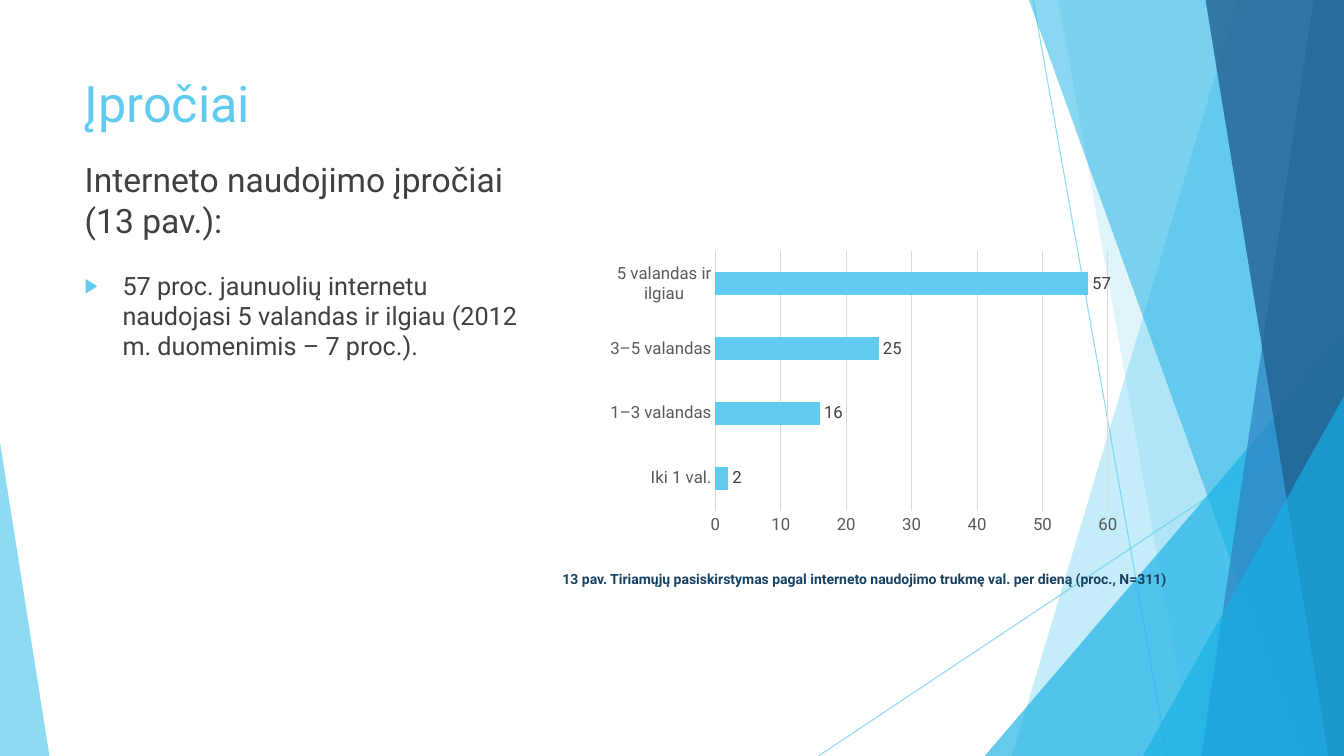
from lxml.etree import SubElement
from pptx import Presentation
from pptx.chart.data import CategoryChartData
from pptx.dml.color import RGBColor
from pptx.enum.chart import XL_CHART_TYPE, XL_LABEL_POSITION, XL_TICK_MARK
from pptx.enum.shapes import MSO_CONNECTOR, MSO_SHAPE
from pptx.enum.text import MSO_ANCHOR, MSO_AUTO_SIZE, PP_ALIGN
from pptx.oxml.ns import qn
from pptx.util import Pt

WIDE, HIGH = 960, 540
SKY, CYAN, BLUE, NAVY = "5FCBEF", "17B0E4", "2E83C3", "226292"
DARK, GREY, PALE, INK = "404040", "595959", "D9D9D9", "174162"


def tint(color, code):
    """Set a colour format from a hex string."""
    color.rgb = RGBColor.from_string(code)


class Deck:
    """Holds the style and the current slide."""

    def __init__(self, face):
        """Start a wide deck with one comparison slide."""
        self.face = face
        self.file = Presentation()
        self.file.slide_width, self.file.slide_height = Pt(WIDE), Pt(HIGH)
        self.page = self.file.slides.add_slide(self.file.slide_layouts[4])
        self.shapes = self.page.shapes

    def font(self, font, size, code, bold=False):
        """Format one font."""
        font.name, font.size, font.bold = self.face, Pt(size), bold
        tint(font.color, code)

    def fade(self, shape, alpha):
        """Make the colour of a shape partly clear."""
        color = shape.element.spPr.find(".//" + qn("a:srgbClr"))
        SubElement(color, qn("a:alpha"), val=str(alpha * 1000))

    def paint(self, shape, code, alpha):
        """Fill a shape and drop its outline and shadow."""
        shape.shadow.inherit = False
        shape.line.fill.background()
        shape.fill.solid()
        tint(shape.fill.fore_color, code)
        self.fade(shape, alpha)

    def band(self, top, base, code, alpha):
        """Draw a band from a slanted left edge to the right of the slide."""
        form = self.shapes.build_freeform(Pt(top), 0)
        ends = [(WIDE, 0), (WIDE, HIGH), (base, HIGH)]
        form.add_line_segments([(Pt(x), Pt(y)) for x, y in ends])
        self.paint(form.convert_to_shape(), code, alpha)

    def peak(self, left, top, wide, tip, code, alpha):
        """Draw a triangle standing on the bottom of the slide."""
        shape = self.shapes.add_shape(
            MSO_SHAPE.ISOSCELES_TRIANGLE, Pt(left), Pt(top), Pt(wide), Pt(HIGH - top))
        shape.adjustments[0] = tip
        self.paint(shape, code, alpha)

    def line(self, *ends):
        """Draw a thin ray."""
        ray = self.shapes.add_connector(MSO_CONNECTOR.STRAIGHT, *map(Pt, ends))
        ray.line.width = Pt(0.75)
        tint(ray.line.color, SKY)
        self.fade(ray, 70)
        SubElement(ray.element.spPr, qn("a:effectLst"))

    def text(self, frame, words, size, code, bold=False, align=PP_ALIGN.LEFT):
        """Add one run to the first paragraph and return the paragraph."""
        para = frame.paragraphs[0]
        para.alignment = align
        run = para.add_run()
        run.text = words
        self.font(run.font, size, code, bold)
        return para

    def hold(self, key, area, words, size, code, anchor=MSO_ANCHOR.TOP):
        """Place a template holder in front and fill in its text."""
        box = next(b for b in self.page.placeholders
                   if b.placeholder_format.idx == key)
        box.left, box.top, box.width, box.height = map(Pt, area)
        box.element.getparent().append(box.element)
        frame = box.text_frame
        frame.auto_size = MSO_AUTO_SIZE.NONE
        frame.vertical_anchor = anchor
        para = self.text(frame, words, size, code)
        para.space_before = Pt(10 if key else 0)
        return para

    def bullet(self, para, indent):
        """Give a paragraph an arrow bullet."""
        props = para._p.get_or_add_pPr()
        props.set("marL", str(Pt(indent)))
        props.set("indent", str(Pt(-indent)))
        SubElement(SubElement(props, qn("a:buClr")), qn("a:srgbClr"), val=SKY)
        SubElement(props, qn("a:buSzPct"), val="80000")
        SubElement(props, qn("a:buFont"), typeface="Arial")
        SubElement(props, qn("a:buChar"), char="▶")

    def note(self, area, words, size, code):
        """Add a centred bold caption on one line."""
        frame = self.shapes.add_textbox(*map(Pt, area)).text_frame
        frame.word_wrap = False
        frame.auto_size = MSO_AUTO_SIZE.SHAPE_TO_FIT_TEXT
        self.text(frame, words, size, code, True, PP_ALIGN.CENTER)

    def bars(self, area, rows):
        """Add the horizontal bar chart."""
        data = CategoryChartData(number_format="0")
        data.categories = list(rows)
        data.add_series("Series 1", list(rows.values()))
        chart = self.shapes.add_chart(
            XL_CHART_TYPE.BAR_CLUSTERED, *map(Pt, area), data).chart
        chart.has_legend = chart.has_title = False
        self.font(chart.font, 10, "000000")
        names, scale = chart.category_axis, chart.value_axis
        for axis in (names, scale):
            axis.major_tick_mark = axis.minor_tick_mark = XL_TICK_MARK.NONE
            self.font(axis.tick_labels.font, 12, GREY)
        scale.minimum_scale, scale.maximum_scale, scale.major_unit = 0, 60, 10
        scale.has_major_gridlines = True
        scale.format.line.fill.background()
        for form in (names.format, scale.major_gridlines.format):
            form.line.width = Pt(0.75)
            tint(form.line.color, PALE)
        plot = chart.plots[0]
        plot.gap_width, plot.vary_by_categories = 182, False
        fill = plot.series[0].format.fill
        fill.solid()
        tint(fill.fore_color, SKY)
        plot.has_data_labels = True
        tags = plot.data_labels
        tags.show_value = True
        tags.number_format, tags.number_format_is_linked = "0", False
        tags.position = XL_LABEL_POSITION.OUTSIDE_END
        self.font(tags.font, 12, DARK)

    def save(self):
        """Drop empty holders and save the deck."""
        for box in list(self.page.placeholders):
            if not box.text_frame.text:
                box.element.getparent().remove(box.element)
        self.file.save("out.pptx")


def main():
    """Build the slide on internet habits."""
    deck = Deck("Roboto")
    deck.line(738, 0, 833.8, HIGH)
    deck.line(WIDE, 290.2, 584.6, HIGH)
    deck.band(884.2, 722.9, SKY, 36)
    deck.band(756, 851.8, SKY, 20)
    deck.peak(703.4, 239.8, 256.6, 1, CYAN, 66)
    deck.band(735, 929.5, CYAN, 50)
    deck.band(938.2, 858.2, BLUE, 70)
    deck.band(861.1, 949, NAVY, 80)
    deck.peak(816.5, 283, 143.5, 1, CYAN, 66)
    deck.peak(0, 316, 35.3, 0, SKY, 70)
    deck.hold(0, (53.3, 48, 677, 104), "Įpročiai", 36, SKY)
    deck.hold(1, (53.3, 129.6, 330, 45.4),
              "Interneto naudojimo įpročiai (13 pav.):", 24, DARK, MSO_ANCHOR.BOTTOM)
    fact = deck.hold(
        2, (53.3, 189.4, 330, 260),
        "57 proc. jaunuolių internetu naudojasi 5 valandas ir ilgiau "
        "(2012 m. duomenimis – 7 proc.).", 18, DARK)
    deck.bullet(fact, 27)
    deck.note((377.3, 404, 480, 19.4),
              "13 pav. Tiriamųjų pasiskirstymas pagal interneto naudojimo trukmę "
              "val. per dieną (proc., N=311)", 10, INK)
    deck.bars((428.4, 175, 377.3, 211),
              {"Iki 1 val.": 2, "1–3 valandas": 16,
               "3–5 valandas": 25, "5 valandas ir ilgiau": 57})
    deck.save()


if __name__ == "__main__":
    main()
